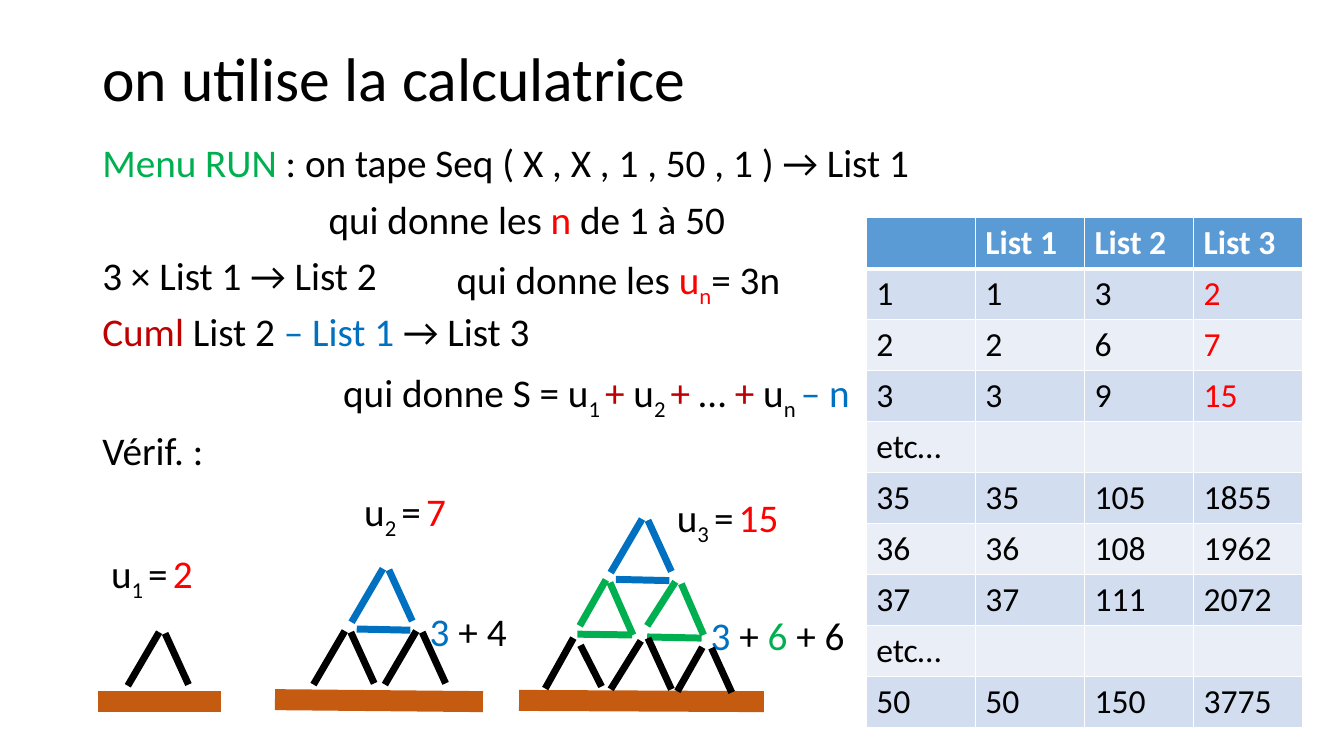
from lxml import etree
from pptx import Presentation
from pptx.dml.color import RGBColor
from pptx.enum.shapes import MSO_CONNECTOR
from pptx.enum.text import MSO_ANCHOR
from pptx.oxml.ns import qn
from pptx.util import Cm, Pt

BLACK, WHITE, RED, DARK_RED = "000000", "FFFFFF", "FF0000", "C00000"
GREEN, BLUE, BROWN = "00B050", "0070C0", "C55A11"


def paint(target, colour):
    """Give a font, fill or line a solid hex colour."""
    fill = target if hasattr(target, "solid") else target.fill
    fill.solid()
    fill.fore_color.rgb = RGBColor.from_string(colour)


def add_span(para, text, size, colour=BLACK, bold=False, subscript=False):
    span = para.add_run()
    span.text = text
    span.font.name = "Calibri"
    span.font.size = Pt(size)
    span.font.bold = bold
    paint(span.font, colour)
    if subscript:
        span._r.get_or_add_rPr().set("baseline", "-25000")


deck = Presentation()
deck.slide_width, deck.slide_height = Cm(33.87), Cm(19.05)
page = deck.slides.add_slide(deck.slide_layouts[6])

# Title
title_box = page.shapes.add_textbox(Cm(2.33), Cm(1.02), Cm(29.21), Cm(2.08))
title_box.text_frame.word_wrap = True
title_box.text_frame.vertical_anchor = MSO_ANCHOR.MIDDLE
title_para = title_box.text_frame.paragraphs[0]
title_para.line_spacing = 0.9
add_span(title_para, "on utilise la calculatrice", 44)

# Calculator steps: left margin (cm), spans (text, colour, subscript)
steps = [
    (0, [("Menu RUN ", GREEN), (": on tape Seq ( X , X , 1 , 50 , 1 ) → List 1", BLACK)]),
    (5.7, [("qui donne les ", BLACK), ("n", RED), (" de 1 à 50", BLACK)]),
    (0, [("3 × List 1 → List 2", BLACK)]),
    (0, [("Cuml", DARK_RED), (" List 2 ", BLACK), ("– List 1 ", BLUE),
         ("→ List 3", BLACK)]),
    (6.07, [("qui donne S = u", BLACK), ("1 ", BLACK, True), ("+", DARK_RED),
            (" u", BLACK), ("2 ", BLACK, True), ("+", DARK_RED), (" … ", BLACK),
            ("+", DARK_RED), (" u", BLACK), ("n ", BLACK, True), ("– n", BLUE)]),
    (0, [("Vérif. :", BLACK)]),
    (6.6, [("u", BLACK), ("2 ", BLACK, True), ("=", BLACK), (" ", BLACK, True),
           ("7", RED)]),
    (0.22, [("u", BLACK), ("1 ", BLACK, True), ("=", BLACK), (" ", BLACK, True),
            ("2", RED)]),
    (8.25, [("3", BLUE), (" + 4", BLACK)]),
]
second_term = [("qui donne les ", BLACK), ("u", RED), ("n", RED, True), ("= 3n", BLACK)]
third_house = [("u", BLACK), ("3 ", BLACK, True), ("=", BLACK), (" ", BLACK, True),
               ("15", RED)]
third_sum = [("3", BLUE), (" + ", BLACK), ("6", GREEN), (" + 6", BLACK)]

# Text blocks: left, top, width, height (cm), paragraphs
blocks = [
    (2.33, 3.5, 29.21, 15.55, steps),
    (11.26, 6.32, 9.5, 1.4, [(0, second_term)]),
    (16.81, 12.32, 4.5, 1.4, [(0, third_house)]),
    (17.66, 15.42, 4.2, 1.4, [(0, third_sum)]),
]
for *place, block_paras in blocks:
    box = page.shapes.add_textbox(*map(Cm, place))
    frame = box.text_frame
    frame.word_wrap = True
    for index, (margin, spans) in enumerate(block_paras):
        para = frame.add_paragraph() if index else frame.paragraphs[0]
        para.line_spacing = 0.9
        para.space_before = Pt(10)
        para_props = para._p.get_or_add_pPr()
        para_props.set("marL", str(Cm(margin)))
        para_props.set("indent", "0")
        for text, colour, *subscript in spans:
            add_span(para, text, 28, colour, subscript=bool(subscript))

# Lists shown by the calculator
list_rows = [
    ["", "List 1", "List 2", "List 3"],
    ["1", "1", "3", "2"],
    ["2", "2", "6", "7"],
    ["3", "3", "9", "15"],
    ["etc…", "", "", ""],
    ["35", "35", "105", "1855"],
    ["36", "36", "108", "1962"],
    ["37", "37", "111", "2072"],
    ["etc…", "", "", ""],
    ["50", "50", "150", "3775"],
]
lists_height = Cm(12.85)
lists = page.shapes.add_table(len(list_rows), 4, Cm(21.83), Cm(5.49),
                              Cm(11), lists_height).table
for row, values in enumerate(list_rows):
    lists.rows[row].height = lists_height // len(list_rows)
    for column, value in enumerate(values):
        cell = lists.cell(row, column)
        header = row == 0
        paint(cell.fill, "5B9BD5" if header else "D2DEEF" if row % 2 else "EAEFF7")
        if header:
            border = etree.Element(qn("a:lnB"), w=str(Pt(3)))
            border_fill = etree.SubElement(border, qn("a:solidFill"))
            etree.SubElement(border_fill, qn("a:srgbClr"), val=WHITE)
            cell._tc.get_or_add_tcPr().insert(0, border)
        checked = column == 3 and 1 <= row <= 3
        if value:
            add_span(cell.text_frame.paragraphs[0], value, 24,
                     WHITE if header else RED if checked else BLACK, bold=header)

# Strokes: x1, y1, x2, y2 (cm), colour, width (pt)
strokes = [
    (5.56, 17.68, 2.46, 17.68, BROWN, 15),
    (12.17, 17.68, 6.93, 17.63, BROWN, 15),
    (19.25, 17.68, 13.08, 17.65, BROWN, 15),
]

# Regular cards: two legs under an apex, and a base under the blue ones
legs = [(0, 0, -0.79, 1.35), (0.15, 0.03, 0.74, 1.32)]
base = (0.69, 1.55, -0.66, 1.52)
for x, y, colour in [(4.01, 15.93, BLACK), (8.69, 15.9, BLACK), (10.49, 15.9, BLACK),
                     (9.65, 14.33, BLUE), (16.18, 13.08, BLUE)]:
    for x1, y1, x2, y2 in legs + ([base] if colour == BLUE else []):
        strokes.append((x + x1, y + y1, x + x2, y + y2, colour, 5))

# Lower floors of the third house, placed by hand
lower_floors = {
    GREEN: [(15.27, 14.61, 14.61, 15.77), (15.37, 14.68, 15.95, 16),
            (17.02, 14.66, 16.31, 15.77), (17.17, 14.71, 17.73, 16),
            (15.93, 16, 14.55, 15.98), (17.68, 16.08, 16.31, 16.05)],
    BLACK: [(14.45, 16.08, 13.74, 17.35), (14.63, 16.26, 15.16, 17.3),
            (16.15, 16.15, 15.39, 17.37), (16.33, 16.08, 16.92, 17.37),
            (17.7, 16.31, 17.07, 17.42), (17.93, 16.33, 18.44, 17.45)],
}
for colour, cards in lower_floors.items():
    strokes += [(*ends, colour, 5) for ends in cards]

for *ends, colour, width in strokes:
    stroke = page.shapes.add_connector(MSO_CONNECTOR.STRAIGHT, *map(Cm, ends))
    paint(stroke.line, colour)
    stroke.line.width = Pt(width)
    etree.SubElement(stroke._element.spPr, qn("a:effectLst"))

deck.save("out.pptx")
